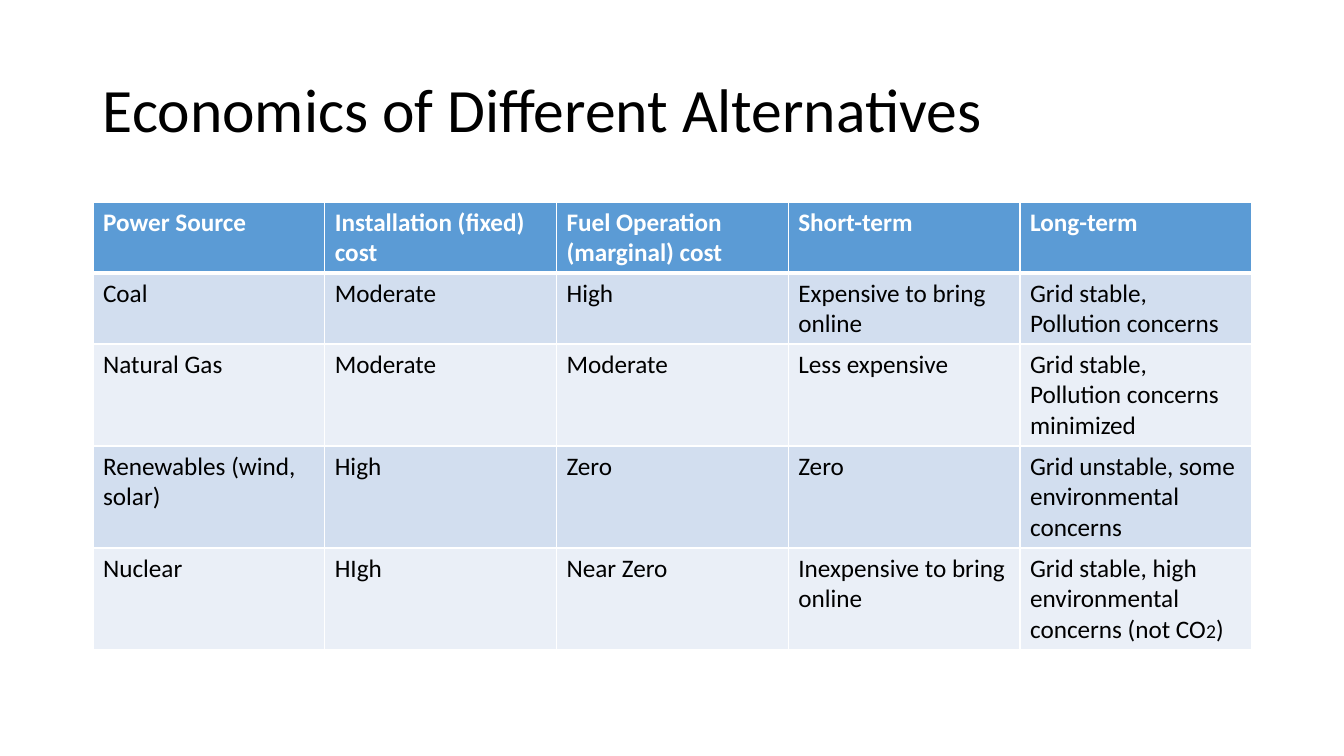
from lxml import etree
from pptx import Presentation
from pptx import util as u
from pptx.dml.color import RGBColor
from pptx.enum import text
from pptx.oxml import ns

BLACK = RGBColor(0x00, 0x00, 0x00)
WHITE = RGBColor(0xFF, 0xFF, 0xFF)
BLUE = RGBColor(0x5B, 0x9B, 0xD5)
BAND_DARK = RGBColor(0xD2, 0xDE, 0xEF)
BAND_LIGHT = RGBColor(0xEA, 0xEF, 0xF7)

PX_PER_INCH = 100.8

ROWS = [
    ["Power Source", "Installation (fixed) cost", "Fuel Operation (marginal) cost",
     "Short-term", "Long-term"],
    ["Coal", "Moderate", "High", "Expensive to bring online",
     "Grid stable, Pollution concerns"],
    ["Natural Gas", "Moderate", "Moderate", "Less expensive",
     "Grid stable, Pollution concerns minimized"],
    ["Renewables (wind, solar)", "High", "Zero", "Zero",
     "Grid unstable, some environmental concerns"],
    ["Nuclear", "HIgh", "Near Zero", "Inexpensive to bring online",
     "Grid stable, high environmental concerns (not CO"],
]
ROW_HEIGHTS = [71, 71, 102, 102, 102]


def px(n):
    return u.Inches(n / PX_PER_INCH)


class Deck:
    def __init__(self, width, height, font="Calibri"):
        self.font = font
        self.prs = Presentation()
        self.prs.slide_width, self.prs.slide_height = px(width), px(height)
        self.s = self.prs.slides.add_slide(self.prs.slide_layouts[6])

    def style(self, r, size, color, bold=False):
        f = r.font
        f.name, f.size, f.bold = self.font, u.Pt(size), bold
        f.color.rgb = color

    def title(self, x, y, w, h, words, size):
        tf = self.s.shapes.add_textbox(px(x), px(y), px(w), px(h)).text_frame
        tf.word_wrap = True
        tf.vertical_anchor = text.MSO_ANCHOR.MIDDLE
        p = tf.paragraphs[0]
        p.text = words
        p.line_spacing = 0.9
        self.style(p.runs[0], size, BLACK)

    def borders(self, cell, top, bottom):
        tcPr = cell._tc.get_or_add_tcPr()
        for side, width in (("L", 1), ("R", 1), ("T", top), ("B", bottom)):
            ln = etree.SubElement(tcPr, ns.qn(f"a:ln{side}"), w=str(u.Pt(width)))
            fill = etree.SubElement(ln, ns.qn("a:solidFill"))
            etree.SubElement(fill, ns.qn("a:srgbClr"), val=str(WHITE))

    def table(self, x, y, w, rows, heights, size):
        n = len(rows[0])
        tbl = self.s.shapes.add_table(
            len(rows), n, px(x), px(y), px(w), px(sum(heights))).table
        for col in tbl.columns:
            col.width = px(w / n)
        for i, row in enumerate(rows):
            tbl.rows[i].height = px(heights[i])
            header = i == 0
            band = BLUE if header else BAND_DARK if i % 2 else BAND_LIGHT
            for j, words in enumerate(row):
                cell = tbl.cell(i, j)
                # The rule under the header is thicker than the others
                self.borders(cell, 3 if i == 1 else 1, 3 if header else 1)
                cell.fill.solid()
                cell.fill.fore_color.rgb = band
                p = cell.text_frame.paragraphs[0]
                p.text = words
                self.style(p.runs[0], size, WHITE if header else BLACK, header)
        return tbl

    def add_run(self, cell, words, size):
        r = cell.text_frame.paragraphs[0].add_run()
        r.text = words
        self.style(r, size, BLACK)


def main():
    deck = Deck(1344, 756)

    # Heading
    deck.title(93, 40, 1159, 146, "Economics of Different Alternatives", 44)

    # Comparison of power sources
    tbl = deck.table(93, 202, 1159, ROWS, ROW_HEIGHTS, 18)

    # Small digit that ends the CO2 formula
    nuclear_long_term = tbl.cell(4, 4)
    deck.add_run(nuclear_long_term, "2", 14)
    deck.add_run(nuclear_long_term, ")", 18)

    deck.prs.save("out.pptx")


if __name__ == "__main__":
    main()
